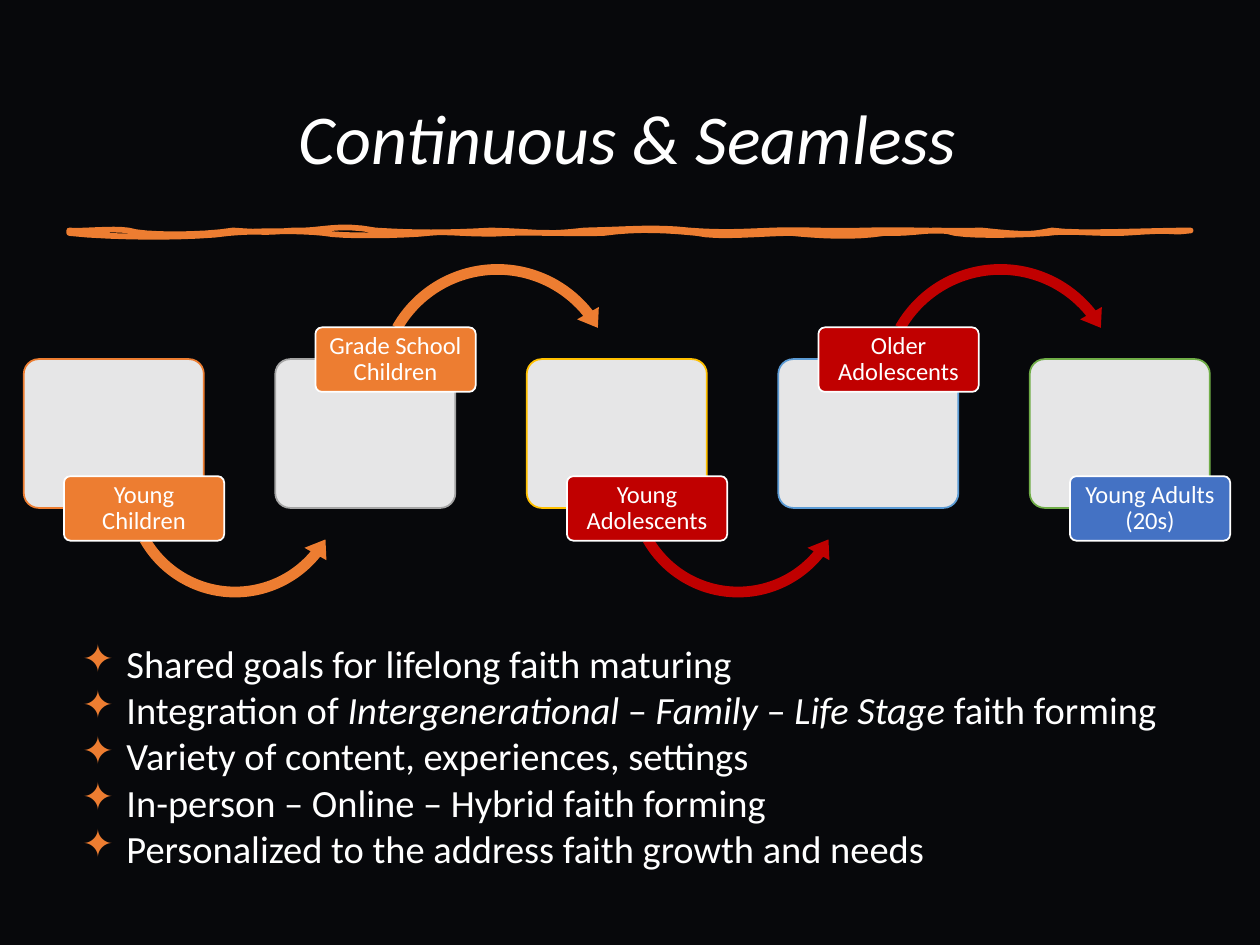
from dataclasses import dataclass
from lxml.etree import SubElement
from pptx import Presentation
from pptx.dml.color import RGBColor
from pptx.enum.shapes import MSO_SHAPE as Kind
from pptx.enum.text import MSO_ANCHOR as Anchor, MSO_AUTO_SIZE as Fit, PP_ALIGN as Align
from pptx.oxml.ns import qn
from pptx.util import Cm, Pt


@dataclass(frozen=True)
class Theme:
    font: str = "Calibri"
    back: str = "07080B"
    white: str = "FFFFFF"
    orange: str = "ED7D31"
    red: str = "C00000"
    blue: str = "4472C4"
    title: int = 40
    body: int = 22
    label: int = 14


T = Theme()

# Label, label and arrow colour, card outline
STAGES = [
    ("Young Children", T.orange, "ED7D31"),
    ("Grade School Children", T.orange, "A5A5A5"),
    ("Young Adolescents", T.red, "FFC000"),
    ("Older Adolescents", T.red, "5B9BD5"),
    ("Young Adults (20s)", T.blue, "70AD47"),
]
POINTS = [
    "Shared goals for lifelong faith maturing",
    "Integration of *Intergenerational* – *Family* – *Life Stage* faith forming",
    "Variety of content, experiences, settings",
    "In-person – Online – Hybrid faith forming",
    "Personalized to the address faith growth and needs",
]

# Brush stroke in hundredths of an inch: two control points, then the end x.
# Every curve ends on its edge's own level.
TOP, LOW, LEFT, RIGHT = 183, 185, 55, 945
TOP_EDGE = [
    (64, 184, 89, 181, 102), (114, 187, 160, 187, 185), (213, 185, 216, 184, 233),
    (254, 184, 268, 177, 298), (331, 185, 352, 185, 390), (431, 184, 428, 187, 464),
    (503, 182, 520, 180, 547), (573, 185, 588, 184, 613), (641, 182, 651, 184, 687),
    (721, 182, 741, 184, 779), (817, 187, 819, 186, 835), (855, 186, 913, 183, RIGHT),
]
LOW_EDGE = [
    (920, 181, 895, 186, 880), (863, 185, 845, 183, 832), (822, 186, 777, 188, 758),
    (743, 180, 727, 186, 702), (676, 189, 650, 187, 628), (607, 185, 570, 189, 553),
    (532, 183, 508, 181, 479), (450, 186, 435, 184, 405), (374, 187, 356, 183, 340),
    (323, 187, 271, 188, 257), (238, 183, 206, 183, 182), (156, 189, 91, 189, LEFT),
]


def rgb(code):
    return RGBColor.from_string(code)


def write(frame, lines, size, color=T.white, italic=False, align=None,
          anchor=Anchor.TOP, inset=None, spacing=None):
    """Fill a text frame; parts between asterisks are italic."""
    frame.word_wrap = True
    frame.vertical_anchor = anchor
    if inset is not None:
        frame.margin_left = frame.margin_right = Cm(inset)
        frame.margin_top = frame.margin_bottom = Cm(inset)
    for i, line in enumerate(lines):
        para = frame.paragraphs[0] if i == 0 else frame.add_paragraph()
        para.alignment = align
        para.line_spacing = spacing
        for j, part in enumerate(line.split("*")):
            run = para.add_run()
            run.text = part
            font = run.font
            font.name, font.size = T.font, Pt(size)
            font.italic = italic or j % 2 == 1
            font.color.rgb = rgb(color)


def shape(slide, kind, box, fill, line=None, adjust=()):
    item = slide.shapes.add_shape(kind, *map(Cm, box))
    item.shadow.inherit = False
    item.fill.solid()
    item.fill.fore_color.rgb = rgb(fill)
    if line:
        item.line.color.rgb = rgb(line)
        item.line.width = Pt(1)
    else:
        item.line.fill.background()
    for i, value in enumerate(adjust):
        item.adjustments[i] = value
    return item


def fade(item, percent):
    color = item.fill._xPr.find(qn("a:solidFill"))[0]
    SubElement(color, qn("a:alpha"), val=str(percent * 1000))


def bullet(para, mark, color):
    props = para._p.get_or_add_pPr()
    props.set("marL", str(Cm(0.9)))
    props.set("indent", str(Cm(-0.9)))
    tint = SubElement(props, qn("a:buClr"))
    SubElement(tint, qn("a:srgbClr"), val=color)
    SubElement(props, qn("a:buChar"), char=mark)


def trace(start, level, curves, steps=8):
    """Points along a chain of cubic curves."""
    spots = []
    for x1, y1, x2, y2, end in curves:
        for k in range(1, steps + 1):
            t = k / steps
            w = ((1 - t) ** 3, 3 * t * (1 - t) ** 2, 3 * t * t * (1 - t), t ** 3)
            x = sum(a * b for a, b in zip(w, (start, x1, x2, end)))
            y = sum(a * b for a, b in zip(w, (level, y1, y2, level)))
            spots.append((Cm(x * 0.0254), Cm(y * 0.0254)))
        start = end
    return spots


def brush(slide):
    spots = trace(LEFT, TOP, TOP_EDGE) + trace(RIGHT, LOW, LOW_EDGE)
    pen = slide.shapes.build_freeform(Cm(LEFT * 0.0254), Cm(TOP * 0.0254))
    pen.add_line_segments(spots, close=True)
    item = pen.convert_to_shape()
    item.shadow.inherit = False
    item.fill.background()
    item.line.color.rgb = rgb(T.orange)
    item.line.width = Pt(3.25)


def stage(slide, index):
    """One card with its label and the arrow on to the next card."""
    label, color, edge = STAGES[index]
    left = 0.48 + 5.07 * index
    high = index % 2 == 1
    card = shape(slide, Kind.ROUNDED_RECTANGLE, (left, 7.24, 3.63, 3), T.white, edge, [0.1])
    fade(card, 90)
    if index < len(STAGES) - 1:
        if high:
            shape(slide, Kind.CIRCULAR_ARROW, (left + 1.9, 5.18, 5.16, 5.16), color,
                  adjust=(0.042, 5.282, 192.963, 125.755, 0.049))
        else:
            shape(slide, Kind.LEFT_CIRCULAR_ARROW, (left + 1.91, 7.49, 4.7, 4.7), color,
                  adjust=(0.046, 5.864, 23.619, 90.245, 0.054))
    top = 6.6 if high else 9.6
    tag = shape(slide, Kind.ROUNDED_RECTANGLE, (left + 0.81, top, 3.23, 1.3),
                color, T.white, [0.1])
    write(tag.text_frame, [label], T.label, align=Align.CENTER,
          anchor=Anchor.MIDDLE, inset=0.1, spacing=0.9)


def heading(slide):
    title = slide.shapes.title
    title.left, title.top, title.width, title.height = map(Cm, (0.84, 1.02, 23.62, 3.68))
    write(title.text_frame, ["Continuous & Seamless"], T.title, italic=True,
          align=Align.CENTER, anchor=Anchor.MIDDLE, spacing=0.9)


def points(slide):
    box = slide.shapes.add_textbox(*map(Cm, (1.4, 12.78, 22.6, 4.95)))
    write(box.text_frame, POINTS, T.body)
    box.text_frame.auto_size = Fit.SHAPE_TO_FIT_TEXT
    for para in box.text_frame.paragraphs:
        bullet(para, "✦", T.orange)


def main():
    deck = Presentation()
    deck.slide_width, deck.slide_height = Cm(25.4), Cm(19.05)
    slide = deck.slides.add_slide(deck.slide_layouts[5])
    slide.background.fill.solid()
    slide.background.fill.fore_color.rgb = rgb(T.back)
    heading(slide)
    brush(slide)
    for index in range(len(STAGES)):
        stage(slide, index)
    points(slide)
    deck.save("out.pptx")


if __name__ == "__main__":
    main()
